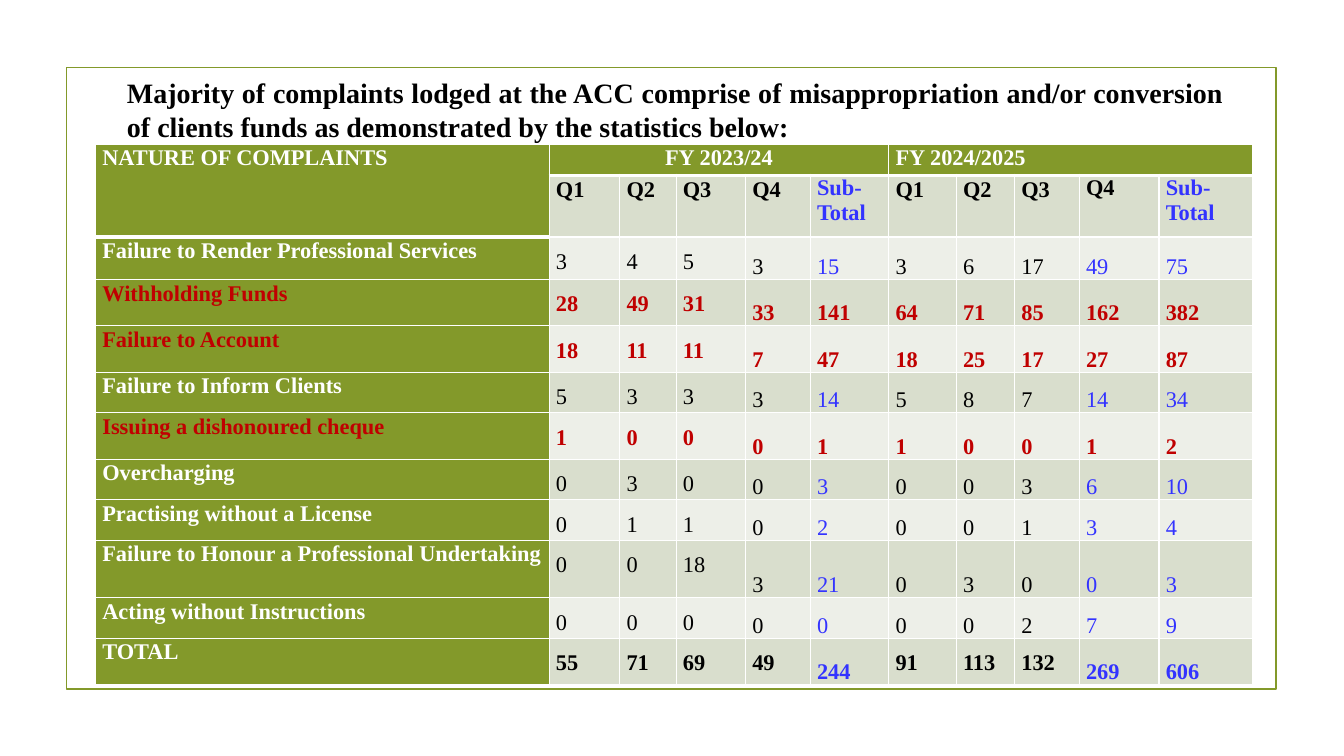
from dataclasses import dataclass

from lxml.etree import SubElement
from pptx import Presentation
from pptx.dml.color import RGBColor as Rgb
from pptx.enum.shapes import MSO_SHAPE as Shape
from pptx.enum.text import MSO_ANCHOR as Anchor, PP_ALIGN as Align
from pptx.oxml.ns import qn
from pptx.util import Cm, Pt


@dataclass(frozen=True)
class Theme:
    font: str = "Times New Roman"
    title_size: int = 20
    table_size: int = 16
    olive: str = "83992A"
    dark_band: str = "D9DECD"
    light_band: str = "EDEFE8"
    white: str = "FFFFFF"
    black: str = "000000"
    blue: str = "3333FF"
    red: str = "C00000"


theme = Theme()


def write(frame, text, size=theme.table_size, color=theme.black, bold=True,
          align=Align.LEFT, spacing=1.0):
    para = frame.paragraphs[0]
    para.alignment = align
    para.line_spacing = spacing
    span = para.add_run()
    span.text = text
    span.font.name = theme.font
    span.font.size = Pt(size)
    span.font.bold = bold
    span.font.color.rgb = Rgb.from_string(color)


def style_cell(cell, fill, bottom=1):
    cell.margin_left = cell.margin_right = Cm(0.17)
    cell.margin_top = cell.margin_bottom = Cm(0)
    properties = cell._tc.get_or_add_tcPr()
    for side, width in (("lnL", 1), ("lnR", 1), ("lnT", 1), ("lnB", bottom)):
        line = SubElement(properties, qn(f"a:{side}"), w=str(Pt(width)))
        paint = SubElement(line, qn("a:solidFill"))
        SubElement(paint, qn("a:srgbClr"), val=theme.white)
    cell.fill.solid()
    cell.fill.fore_color.rgb = Rgb.from_string(fill)


title = ("Majority of complaints lodged at the ACC comprise of misappropriation "
         "and/or conversion of clients funds as demonstrated by the statistics below:")
quarters = ["Q1", "Q2", "Q3", "Q4", "Sub-Total"] * 2
complaints = [
    ("Failure to Render Professional Services", 3, 4, 5, 3, 15, 3, 6, 17, 49, 75),
    ("Withholding Funds", 28, 49, 31, 33, 141, 64, 71, 85, 162, 382),
    ("Failure to Account", 18, 11, 11, 7, 47, 18, 25, 17, 27, 87),
    ("Failure to Inform Clients", 5, 3, 3, 3, 14, 5, 8, 7, 14, 34),
    ("Issuing a dishonoured cheque", 1, 0, 0, 0, 1, 1, 0, 0, 1, 2),
    ("Overcharging", 0, 3, 0, 0, 3, 0, 0, 3, 6, 10),
    ("Practising without a License", 0, 1, 1, 0, 2, 0, 0, 1, 3, 4),
    ("Failure to Honour a Professional Undertaking", 0, 0, 18, 3, 21, 0, 3, 0, 0, 3),
    ("Acting without Instructions", 0, 0, 0, 0, 0, 0, 0, 2, 7, 9),
    ("TOTAL", 55, 71, 69, 49, 244, 91, 113, 132, 269, 606),
]
highlighted = {"Withholding Funds", "Failure to Account", "Issuing a dishonoured cheque"}
summary_columns = {5, 9, 10}
column_widths = [11.43, 1.78, 1.42, 1.75, 1.63, 1.98, 1.7, 1.47, 1.63, 2.01, 2.36]
row_heights = [0.79, 1.55, 1.07, 1.17, 1.17, 1.02, 1.17, 1.02, 1.02, 1.45, 1.02, 1.17]

deck = Presentation()
deck.slide_width, deck.slide_height = Cm(33.87), Cm(19.05)
page = deck.slides.add_slide(deck.slide_layouts[6])

border = page.shapes.add_shape(Shape.RECTANGLE, Cm(1.68), Cm(1.7), Cm(30.48), Cm(15.67))
border.shadow.inherit = False
border.fill.background()
border.line.color.rgb = Rgb.from_string(theme.olive)
border.line.width = Pt(1.25)

table = page.shapes.add_table(
    len(row_heights), len(column_widths), Cm(2.41), Cm(3.63),
    Cm(sum(column_widths)), Cm(sum(row_heights))).table
for column, width in zip(table.columns, column_widths):
    column.width = Cm(width)
for row, height in zip(table.rows, row_heights):
    row.height = Cm(height)

for column in range(len(column_widths)):
    style_cell(table.cell(0, column), theme.olive, bottom=3)
style_cell(table.cell(1, 0), theme.olive, bottom=3)
table.cell(0, 0).merge(table.cell(1, 0))
table.cell(0, 1).merge(table.cell(0, 5))
table.cell(0, 6).merge(table.cell(0, 10))
for column, heading, align in ((0, "NATURE OF COMPLAINTS", Align.LEFT),
                               (1, "FY 2023/24", Align.CENTER),
                               (6, "FY 2024/2025", Align.LEFT)):
    write(table.cell(0, column).text_frame, heading, color=theme.white,
          align=align, spacing=1.07)

for column, quarter in enumerate(quarters, start=1):
    cell = table.cell(1, column)
    style_cell(cell, theme.dark_band)
    write(cell.text_frame, quarter,
          color=theme.blue if quarter == "Sub-Total" else theme.black,
          spacing=1.0 if column in summary_columns else 1.07)

for row, (nature, *counts) in enumerate(complaints, start=2):
    is_red = nature in highlighted
    is_total = nature == "TOTAL"
    label = table.cell(row, 0)
    style_cell(label, theme.olive)
    write(label.text_frame, nature, color=theme.red if is_red else theme.white, spacing=1.07)
    for column, count in enumerate(counts, start=1):
        is_summary = column in summary_columns
        cell = table.cell(row, column)
        style_cell(cell, theme.dark_band if row % 2 else theme.light_band)
        if is_summary or (column > 3 and not is_total):
            cell.vertical_anchor = Anchor.BOTTOM
        plain_color = theme.blue if is_summary else theme.black
        write(cell.text_frame, str(count), color=theme.red if is_red else plain_color,
              bold=is_red or is_total, spacing=1.0 if is_summary else 1.5)

box = page.shapes.add_textbox(Cm(2.95), Cm(1.78), Cm(28.14), Cm(2.34))
box.text_frame.word_wrap = True
write(box.text_frame, title, size=theme.title_size, align=Align.JUSTIFY)

deck.save("out.pptx")
